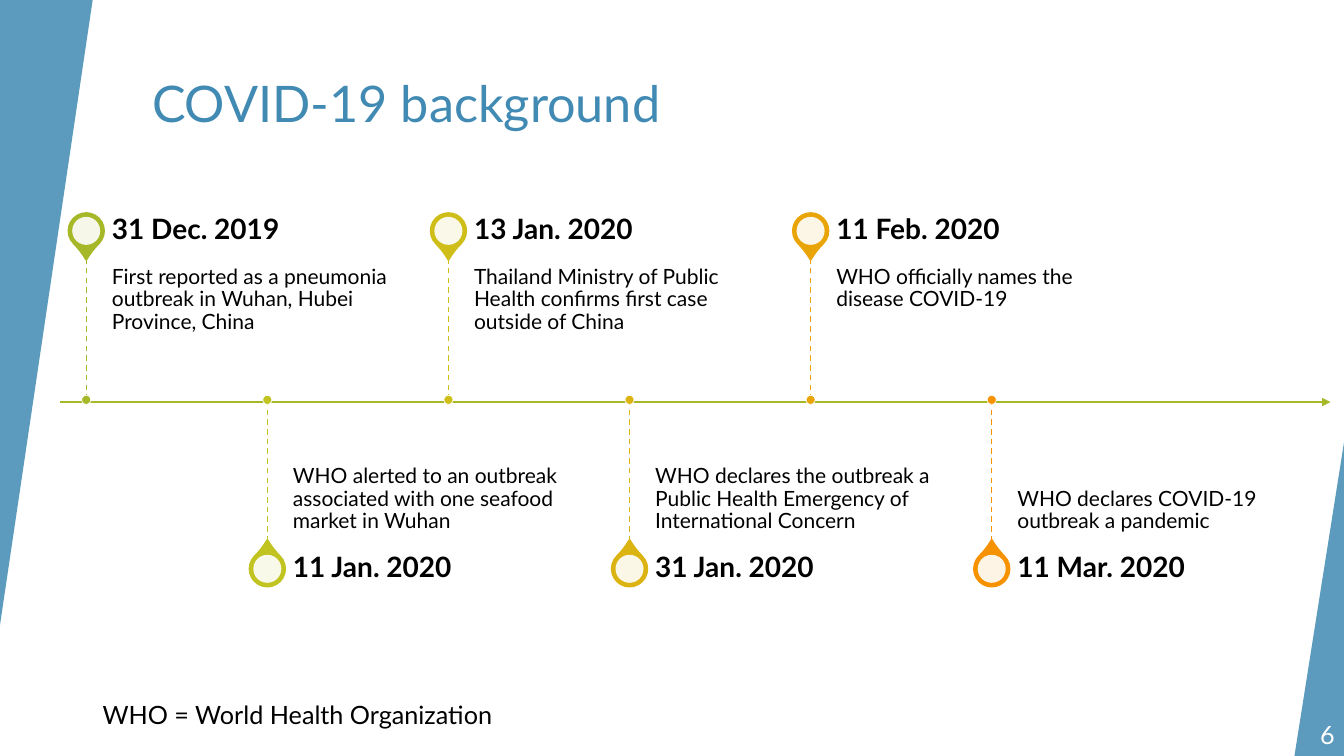
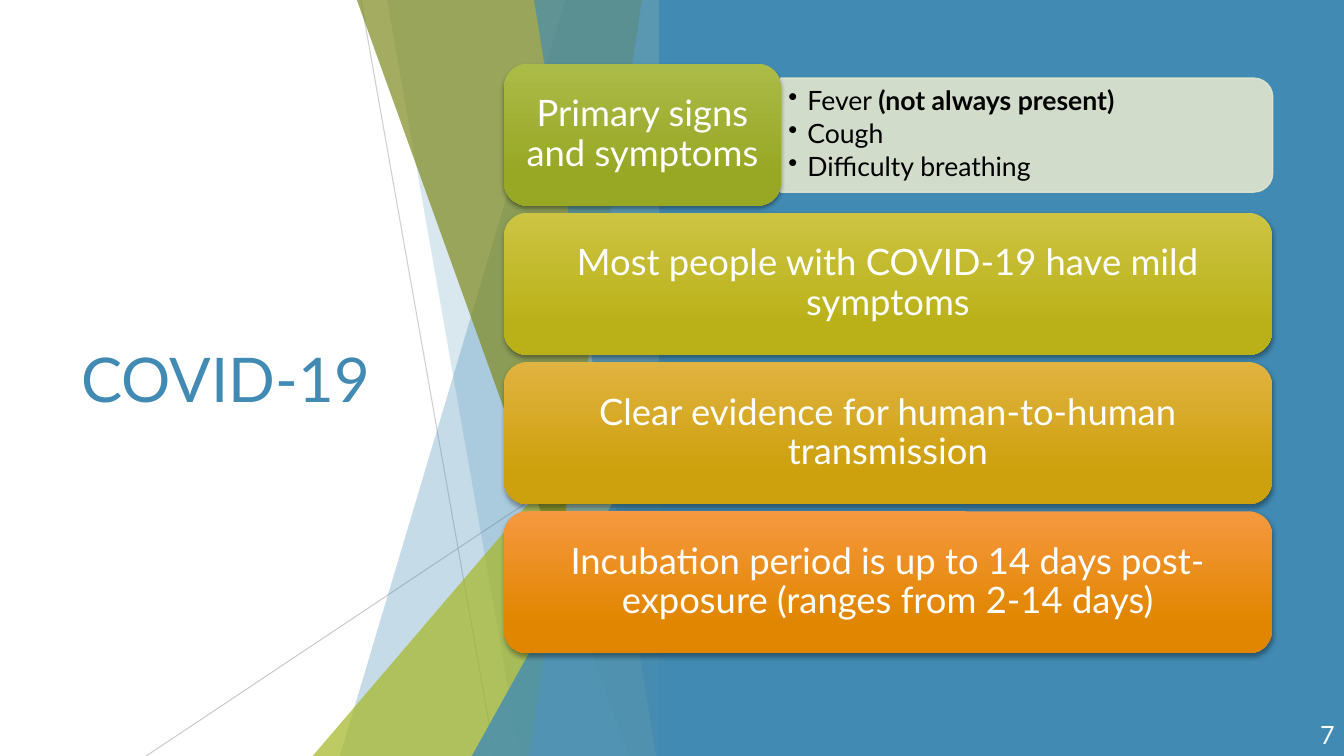
"""Build two slides: a COVID-19 timeline and a summary of key facts."""
from dataclasses import dataclass
from typing import Any, NamedTuple, Optional, Sequence, Union

from lxml import etree
from pptx import Presentation
from pptx import util as u
from pptx.dml import color as c
from pptx.enum import dml, shapes, text
from pptx.oxml import ns

WIDTH, HEIGHT = 960, 540
FONT = "Lato"
COLORS = {
    "blue": "418AB3", "pale_blue": "8ABAD4", "green": "A6B727", "olive": "7D891D",
    "lime": "C1C320", "yellow": "CFBE18", "gold": "DCB411", "amber": "E9A508",
    "orange": "F69200", "panel": "E1E6CD", "gray": "BFBFBF", "white": "FFFFFF", "black": "000000",
    "green_top": "ABBB47", "green_end": "98A724", "yellow_top": "CDC443", "yellow_end": "BAB119",
    "gold_top": "E1B340", "gold_end": "CDA00D", "orange_top": "F6983F", "orange_end": "E18600",
}
AXIS_Y, FIRST_X, STEP = 285.6, 61.6, 129.36
STEM, DATE_HEIGHT, TEXT_GAP, TEXT_WIDTH = 102.7, 36, 18.3, 215.3
PIN, DISC, DOT = 25.2, 20, 6.5
FACET_RIGHT = 480
CARD_LEFT, CARD_TOP, CARD_HEIGHT, CARD_PITCH = 360, 45.4, 101.5, 106.6


class Run(NamedTuple):
    words: str
    bold: bool = False


class Box(NamedTuple):
    left: float
    top: float
    width: float
    height: float


@dataclass
class Event:
    date: str
    description: str
    color: str


@dataclass
class Facet:
    top_left: float
    bottom_left: float
    color: str
    opacity: int
    top: float = 0


@dataclass
class Card:
    caption: str
    color: str
    width: float = 548.6


EVENTS = [
    Event("31 Dec. 2019", "First reported as a pneumonia outbreak in Wuhan, Hubei Province, China", "green"),
    Event("11 Jan. 2020", "WHO alerted to an outbreak associated with one seafood market in Wuhan", "lime"),
    Event("13 Jan. 2020", "Thailand Ministry of Public Health confirms first case outside of China", "yellow"),
    Event("31 Jan. 2020", "WHO declares the outbreak a Public Health Emergency of International Concern", "gold"),
    Event("11 Feb. 2020", "WHO officially names the disease COVID-19", "amber"),
    Event("11 Mar. 2020", "WHO declares COVID-19 outbreak a pandemic", "orange"),
]
FACETS = [
    Facet(404, 242.8, "blue", 30),
    Facet(276.5, 371.5, "blue", 20),
    Facet(FACET_RIGHT, 223.4, "green", 72, top=239.8),
    Facet(254.9, 449.3, "olive", 70),
    Facet(458.6, 378, "pale_blue", 70),
    Facet(381.5, 468.7, "blue", 65),
    Facet(FACET_RIGHT, 337, "blue", 80, top=283),
]
CARDS = [
    Card("Primary signs and symptoms", "green", 198),
    Card("Most people with COVID-19 have mild symptoms", "yellow"),
    Card("Clear evidence for human-to-human transmission", "gold"),
    Card("Incubation period is up to 14 days post-exposure (ranges from 2-14 days)", "orange"),
]
SYMPTOMS = [
    [Run("Fever "), Run("(not always present)", True)],
    [Run("Cough")],
    [Run("Difficulty breathing")],
]


def rgb(name: str) -> c.RGBColor:
    """Return a named colour."""
    return c.RGBColor.from_string(COLORS[name])


def points(values: Sequence[float]) -> list[u.Length]:
    """Convert numbers to lengths in points."""
    return [u.Pt(value) for value in values]


def set_opacity(shape: Any, percent: int) -> None:
    """Make every colour of a shape partly transparent."""
    if percent < 100:
        for element in shape.element.iter(ns.qn("a:srgbClr")):
            etree.SubElement(element, ns.qn("a:alpha"), val=str(percent * 1000))


def paint(shape: Any, fill: str, line: Optional[str] = None, width: float = 1, opacity: int = 100) -> None:
    """Give a shape a plain fill, an optional outline and no shadow."""
    shape.shadow.inherit = False
    shape.fill.solid()
    shape.fill.fore_color.rgb = rgb(fill)
    if line:
        shape.line.color.rgb = rgb(line)
        shape.line.width = u.Pt(width)
    else:
        shape.line.fill.background()
    set_opacity(shape, opacity)


def add_shape(slide: Any, kind: shapes.MSO_SHAPE, box: Box, fill: str, adjust: Optional[float] = None,
              rotation: float = 0, **style: Any) -> Any:
    """Draw a painted preset shape."""
    shape = slide.shapes.add_shape(kind, *points(box))
    shape.rotation = rotation
    if adjust is not None:
        shape.adjustments[0] = adjust
    paint(shape, fill, **style)
    return shape


def add_circle(slide: Any, x: float, y: float, size: float, fill: str, **style: Any) -> Any:
    """Draw a circle around a centre."""
    box = Box(x - size / 2, y - size / 2, size, size)
    return add_shape(slide, shapes.MSO_SHAPE.OVAL, box, fill, **style)


def add_line(slide: Any, start: tuple[float, float], end: tuple[float, float], color: str, width: float,
             dashed: bool = False, arrow: bool = False, opacity: int = 100) -> None:
    """Draw a straight connector."""
    connector = slide.shapes.add_connector(shapes.MSO_CONNECTOR.STRAIGHT, *points(start + end))
    connector.line.color.rgb = rgb(color)
    connector.line.width = u.Pt(width)
    if dashed:
        connector.line.dash_style = dml.MSO_LINE.DASH
    if arrow:
        outline = connector.element.find(".//" + ns.qn("a:ln"))
        etree.SubElement(outline, ns.qn("a:tailEnd"), type="triangle")
    set_opacity(connector, opacity)
    etree.SubElement(connector.element.find(ns.qn("p:spPr")), ns.qn("a:effectLst"))


def write(shape: Any, content: Union[str, Sequence[Sequence[Run]]], *, size: float, color: str = "black",
          bold: bool = False, align: text.PP_ALIGN = text.PP_ALIGN.LEFT,
          anchor: text.MSO_ANCHOR = text.MSO_ANCHOR.TOP, spacing: float = 1, after: float = 0,
          insets: Sequence[float] = (7.2, 3.6, 7.2, 3.6), bullet_indent: float = 0) -> None:
    """Fill a shape with formatted text."""
    frame = shape.text_frame
    frame.word_wrap = True
    frame.vertical_anchor = anchor
    frame.margin_left, frame.margin_top, frame.margin_right, frame.margin_bottom = points(insets)
    lines = [[Run(content, bold)]] if isinstance(content, str) else content
    for index, runs in enumerate(lines):
        paragraph = frame.add_paragraph() if index else frame.paragraphs[0]
        paragraph.alignment = align
        paragraph.line_spacing = spacing
        paragraph.space_after = u.Pt(after)
        for words, is_bold in runs:
            run = paragraph.add_run()
            run.text = words
            run.font.name = FONT
            run.font.size = u.Pt(size)
            run.font.bold = is_bold
            run.font.color.rgb = rgb(color)
        if bullet_indent:
            properties = paragraph._p.get_or_add_pPr()
            indent = u.Pt(bullet_indent)
            properties.set("marL", str(indent))
            properties.set("indent", str(-indent))
            etree.SubElement(properties, ns.qn("a:buChar"), char="•")


def add_text(slide: Any, box: Box, content: Union[str, Sequence[Sequence[Run]]], **style: Any) -> None:
    """Add a text box."""
    write(slide.shapes.add_textbox(*points(box)), content, **style)


def add_title(slide: Any, box: Box, content: str, **style: Any) -> None:
    """Add a slide title."""
    add_text(slide, box, content, color="blue", **style)


def add_number(slide: Any, number: int) -> None:
    """Add the slide number."""
    add_text(slide, Box(906.5, 510, 54, 28.8), str(number), size=18, color="white",
             align=text.PP_ALIGN.RIGHT, anchor=text.MSO_ANCHOR.MIDDLE, after=6)


def add_event(slide: Any, index: int, event: Event) -> None:
    """Draw one event, alternately above and below the axis."""
    above = index % 2 == 0
    side = -1 if above else 1
    x = FIRST_X + index * STEP
    stem_end = AXIS_Y + side * STEM
    pin_y = stem_end + side * DATE_HEIGHT / 2
    add_shape(slide, shapes.MSO_SHAPE.TEAR, Box(x - PIN / 2, pin_y - PIN / 2, PIN, PIN), event.color,
              adjust=1.15, rotation=135 if above else 315, line=event.color, width=1.5)
    add_circle(slide, x, pin_y, DISC, "white", opacity=90)
    left = x + TEXT_GAP
    add_text(slide, Box(left, min(AXIS_Y, stem_end), TEXT_WIDTH, STEM), event.description, size=15, spacing=0.9,
             anchor=text.MSO_ANCHOR.TOP if above else text.MSO_ANCHOR.BOTTOM,
             insets=(0, 7.2, 7.2, 11.5) if above else (0, 11.5, 0, 7.2))
    add_text(slide, Box(left, pin_y - DATE_HEIGHT / 2, TEXT_WIDTH, DATE_HEIGHT), event.date, size=20, bold=True,
             spacing=0.9, anchor=text.MSO_ANCHOR.MIDDLE, insets=(0, 0, 10, 0))
    add_line(slide, (x, AXIS_Y), (x, stem_end), event.color, 1, dashed=True)
    add_circle(slide, x, AXIS_Y, DOT, event.color, line="white", width=0.5)


def add_facet(slide: Any, facet: Facet) -> None:
    """Draw one translucent background facet."""
    if facet.top:
        box = Box(facet.bottom_left, facet.top, FACET_RIGHT - facet.bottom_left, HEIGHT - facet.top)
        add_shape(slide, shapes.MSO_SHAPE.ISOSCELES_TRIANGLE, box, facet.color, adjust=1, opacity=facet.opacity)
        return
    builder = slide.shapes.build_freeform(u.Pt(facet.top_left), 0)
    corners = [(FACET_RIGHT, 0), (FACET_RIGHT, HEIGHT), (facet.bottom_left, HEIGHT)]
    builder.add_line_segments([tuple(points(corner)) for corner in corners], close=True)
    paint(builder.convert_to_shape(), facet.color, opacity=facet.opacity)


def add_card(slide: Any, index: int, card: Card) -> None:
    """Draw one shaded card with its caption."""
    box = Box(CARD_LEFT, CARD_TOP + index * CARD_PITCH, card.width, CARD_HEIGHT)
    shape = add_shape(slide, shapes.MSO_SHAPE.ROUNDED_RECTANGLE, box, card.color)
    shape.fill.gradient()
    shape.fill.gradient_angle = 270
    for stop, position, shade in zip(shape.fill.gradient_stops, (0, 0.78), ("top", "end")):
        stop.color.rgb = rgb(f"{card.color}_{shade}")
        stop.position = position
    effects = shape.element.find(".//" + ns.qn("a:effectLst"))
    shadow = etree.SubElement(effects, ns.qn("a:outerShdw"), blurRad=str(u.Pt(3)), dist=str(u.Pt(2)),
                              dir="5400000", rotWithShape="0")
    shade = etree.SubElement(shadow, ns.qn("a:srgbClr"), val=COLORS["black"])
    etree.SubElement(shade, ns.qn("a:alpha"), val="35000")
    write(shape, card.caption, size=26, color="white", align=text.PP_ALIGN.CENTER,
          anchor=text.MSO_ANCHOR.MIDDLE, spacing=0.9, insets=(7.9, 3.6, 7.9, 3.6))


def build_timeline(slide: Any) -> None:
    """Build the background timeline slide."""
    add_title(slide, Box(101.5, 48.2, 802.8, 86.4), "COVID-19 background", size=36)
    for box, rotation in ((Box(0, 0, 66.2, 446.4), 180), (Box(924.6, 316, 35.4, 224), 0)):
        add_shape(slide, shapes.MSO_SHAPE.ISOSCELES_TRIANGLE, box, "blue", adjust=1, rotation=rotation, opacity=85)
    add_line(slide, (43, 287.2), (950.4, 287.2), "green", 1.5, arrow=True)
    for index, event in enumerate(EVENTS):
        add_event(slide, index, event)
    add_number(slide, 6)
    add_text(slide, Box(66.2, 496.1, 482.4, 28.8), "WHO = World Health Organization", size=18)


def build_facts(slide: Any) -> None:
    """Build the key facts slide."""
    add_title(slide, Box(51.1, 108.7, 279.4, 322.6), "COVID-19", size=44, anchor=text.MSO_ANCHOR.MIDDLE)
    add_line(slide, (257.8, 0), (353.5, HEIGHT), "gray", 0.75, opacity=75)
    add_line(slide, (479.5, 290.2), (104.4, HEIGHT), "gray", 0.75, opacity=80)
    for facet in FACETS:
        add_facet(slide, facet)
    add_shape(slide, shapes.MSO_SHAPE.RECTANGLE, Box(470.8, 0, WIDTH - 470.8, HEIGHT), "blue")
    add_number(slide, 7)
    add_shape(slide, shapes.MSO_SHAPE.ROUND_2_SAME_RECTANGLE, Box(692.7, -79.2, 81.4, 351.4), "panel",
              rotation=90, line="panel", opacity=90)
    add_text(slide, Box(557.3, 59.8, 347.8, 73.4), SYMPTOMS, size=19, anchor=text.MSO_ANCHOR.MIDDLE,
             spacing=0.9, after=3, insets=(5.8, 2.9, 5.8, 2.9), bullet_indent=13.7)
    for index, card in enumerate(CARDS):
        add_card(slide, index, card)


def main() -> None:
    """Build and save the presentation."""
    presentation = Presentation()
    presentation.slide_width, presentation.slide_height = points((WIDTH, HEIGHT))
    for build in (build_timeline, build_facts):
        build(presentation.slides.add_slide(presentation.slide_layouts[6]))
    presentation.save("out.pptx")


if __name__ == "__main__":
    main()
